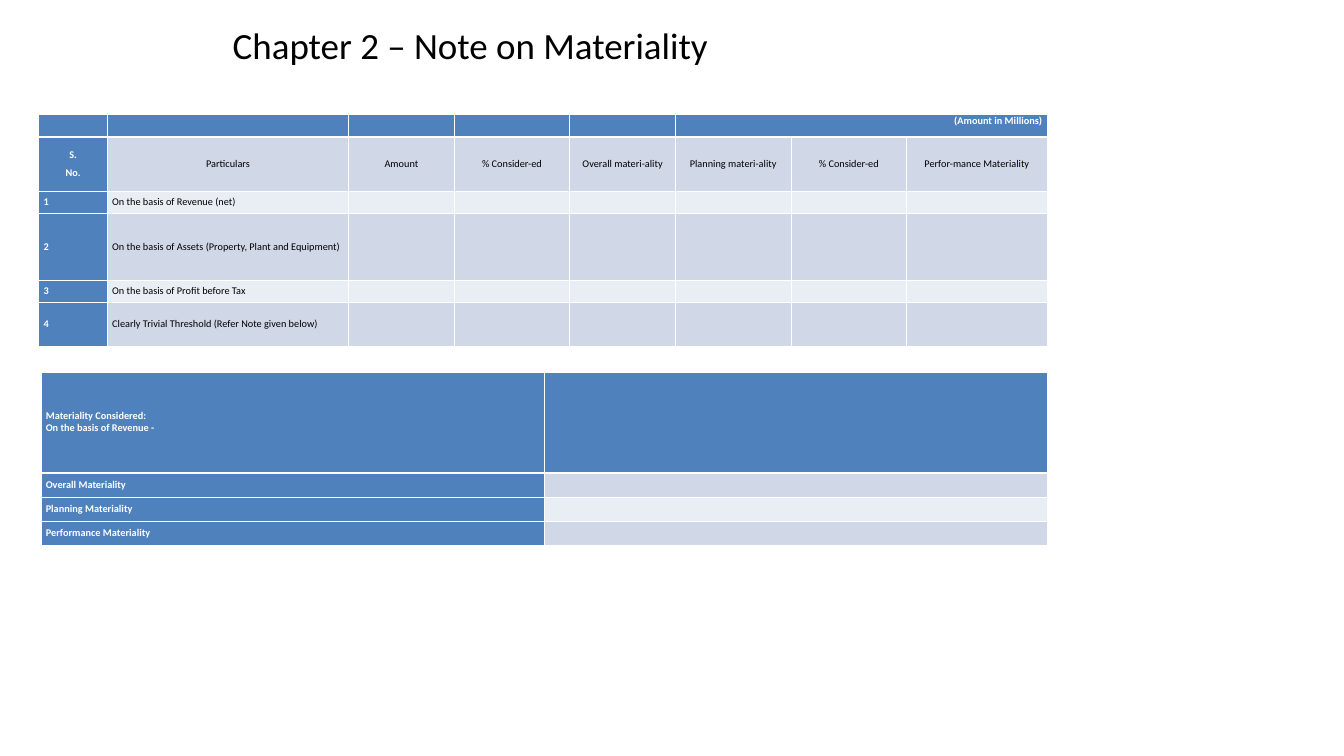
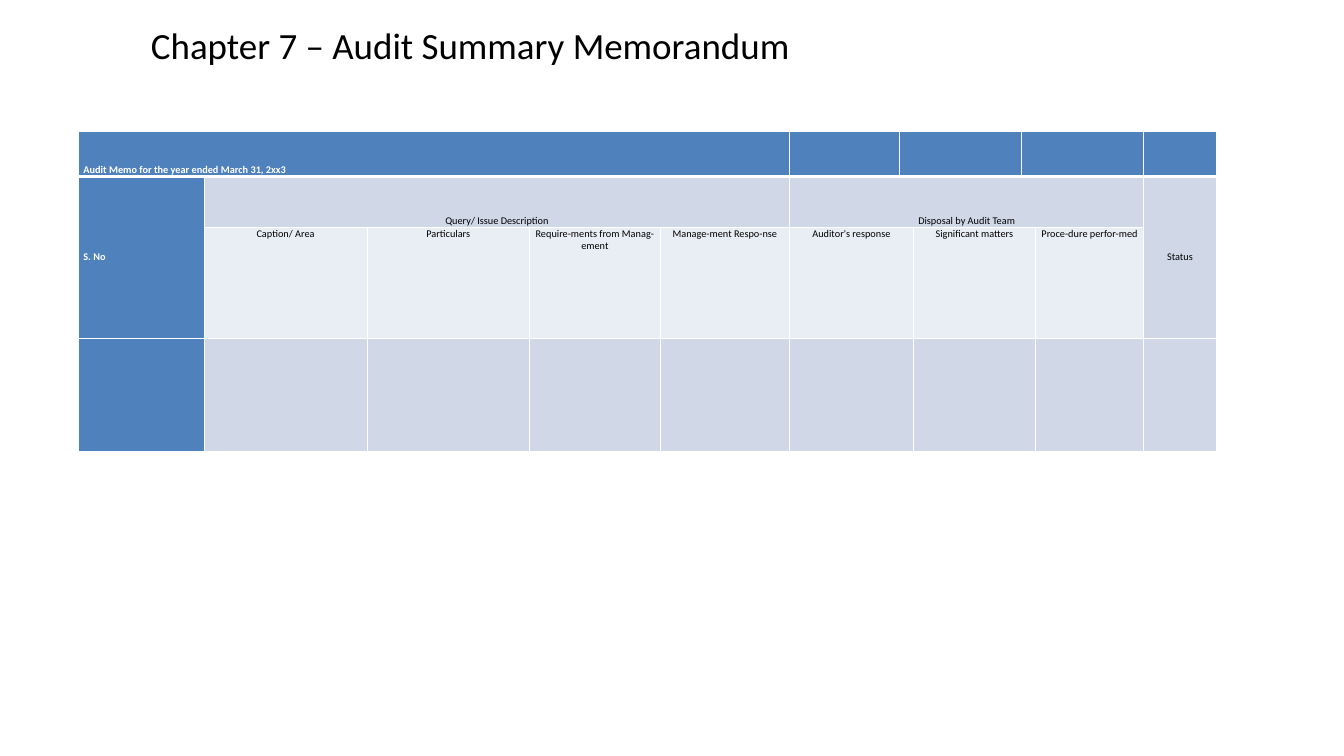
"""Build two audit slides with materiality and memorandum tables."""
from lxml import etree
from pptx import Presentation
from pptx.dml.color import RGBColor
from pptx.enum.text import MSO_ANCHOR, MSO_AUTO_SIZE, PP_ALIGN
from pptx.oxml.ns import qn
from pptx.util import Cm, Pt

TOP, MIDDLE, BOTTOM = MSO_ANCHOR.TOP, MSO_ANCHOR.MIDDLE, MSO_ANCHOR.BOTTOM
LEFT, CENTER, RIGHT, JUSTIFY = PP_ALIGN.LEFT, PP_ALIGN.CENTER, PP_ALIGN.RIGHT, PP_ALIGN.JUSTIFY

FONT = "Calibri"
BLACK, WHITE = "000000", "FFFFFF"
HEADER, DARK_BAND, LIGHT_BAND = "4F81BD", "D0D8E8", "E9EDF4"
TITLE_BOX = (1.27, 0.76, 33.02, 1.88)
SIDE_INSET = 0.18
THIN, THICK = 1, 3
TITLE_ONLY = 5

BASIS_TABLE = {
    "position": (1.47, 4.34),
    "columns": [2.59, 9.12, 3.99, 4.37, 3.99, 4.37, 4.37, 5.31],
    "rows": [0.84, 2.06, 0.84, 2.51, 0.84, 1.68],
    "anchors": [TOP] + [MIDDLE] * 5,
    "alignments": [RIGHT, CENTER] + [JUSTIFY] * 4,
    "spans": [(0, 5, 0, 7)],
    "texts": [
        ["", "", "", "", "", "(Amount in Millions)"],
        ["S.\nNo.", "Particulars", "Amount", "% Consider-ed", "Overall materi-ality",
         "Planning materi-ality", "% Consider-ed", "Perfor-mance Materiality"],
        ["1", "On the basis of Revenue (net)"],
        ["2", "On the basis of Assets (Property, Plant and Equipment)"],
        ["3", "On the basis of Profit before Tax"],
        ["4", "Clearly Trivial Threshold (Refer Note given below)"],
    ],
}
CONSIDERED_TABLE = {
    "position": (1.55, 14.07),
    "columns": [19.02] * 2,
    "rows": [3.81] + [0.91] * 3,
    "anchors": [MIDDLE] * 4,
    "alignments": [LEFT] + [JUSTIFY] * 3,
    "spans": [],
    "texts": [
        ["Materiality Considered:\vOn the basis of Revenue -"],
        ["Overall Materiality"],
        ["Planning Materiality"],
        ["Performance Materiality"],
    ],
}
MEMO_TABLE = {
    "position": (2.97, 4.98),
    "columns": [4.75, 6.15, 6.15, 4.93, 4.9, 4.14, 0.53, 4.09, 0.53, 4.09, 2.74],
    "rows": [1.7, 1.93, 4.19, 4.27],
    "anchors": [BOTTOM, BOTTOM, TOP, TOP],
    "alignments": [JUSTIFY, CENTER, CENTER, CENTER],
    "exceptions": {(1, 0): (MIDDLE, JUSTIFY), (1, 10): (MIDDLE, CENTER)},
    "spans": [(0, 0, 0, 4), (0, 6, 0, 7), (0, 8, 0, 9),
              (1, 0, 2, 0), (1, 1, 1, 4), (1, 5, 1, 9), (1, 10, 2, 10),
              (2, 5, 2, 6), (2, 7, 2, 8), (3, 5, 3, 6), (3, 7, 3, 8)],
    "texts": [
        ["Audit Memo for the year ended March 31, 2xx3"],
        ["S. No", "Query/ Issue Description", "", "", "", "Disposal by Audit Team",
         "", "", "", "", "Status"],
        ["", "Caption/ Area", "Particulars", "Require-ments from Manag-ement",
         "Manage-ment Respo-nse", "Auditor's response", "", "Significant matters", "",
         "Proce-dure perfor-med"],
        [],
    ],
}
SLIDES = [
    ("Chapter 2 – Note on Materiality", [BASIS_TABLE, CONSIDERED_TABLE]),
    ("Chapter 7 – Audit Summary Memorandum", [MEMO_TABLE]),
]


def color(value):
    return RGBColor.from_string(value)


def style_run(run, size, font_color, bold=False):
    run.font.name = FONT
    run.font.size = Pt(size)
    run.font.bold = bold
    run.font.color.rgb = color(font_color)


def add_title(slide, text):
    title = slide.shapes.title
    title.left, title.top, title.width, title.height = map(Cm, TITLE_BOX)
    frame = title.text_frame
    frame.auto_size = MSO_AUTO_SIZE.NONE
    frame.vertical_anchor = MIDDLE
    paragraph = frame.paragraphs[0]
    paragraph.alignment = CENTER
    run = paragraph.add_run()
    run.text = text
    style_run(run, 39.6, BLACK)


def set_borders(cell, row_index):
    widths = {
        "L": THIN,
        "R": THIN,
        "T": THICK if row_index == 1 else THIN,
        "B": THICK if row_index == 0 else THIN,
    }
    properties = cell._tc.get_or_add_tcPr()
    for side, width in widths.items():
        line = etree.SubElement(properties, qn(f"a:ln{side}"), w=str(Pt(width)))
        fill = etree.SubElement(line, qn("a:solidFill"))
        etree.SubElement(fill, qn("a:srgbClr"), val=WHITE)


def write_cell(cell, text, alignment, font_color, bold):
    frame = cell.text_frame
    for index, paragraph_text in enumerate(text.split("\n")):
        paragraph = frame.add_paragraph() if index else frame.paragraphs[0]
        paragraph.alignment = alignment
        paragraph.line_spacing = Pt(13)
        if index:
            paragraph.space_before = Pt(6)
        for line_index, line in enumerate(paragraph_text.split("\v")):
            if line_index:
                paragraph.add_line_break()
            if line:
                run = paragraph.add_run()
                run.text = line
                style_run(run, 11, font_color, bold)


def format_cell(cell, row, column, text, anchor, alignment):
    is_header = row == 0 or column == 0
    band = DARK_BAND if row % 2 else LIGHT_BAND
    set_borders(cell, row)
    cell.fill.solid()
    cell.fill.fore_color.rgb = color(HEADER if is_header else band)
    cell.margin_left = cell.margin_right = Cm(SIDE_INSET)
    cell.margin_top = cell.margin_bottom = Cm(0)
    cell.vertical_anchor = anchor
    write_cell(cell, text, alignment, WHITE if is_header else BLACK, is_header)


def add_grid(slide, content):
    widths, heights = content["columns"], content["rows"]
    left, top = content["position"]
    table = slide.shapes.add_table(len(heights), len(widths), Cm(left), Cm(top),
                                   Cm(sum(widths)), Cm(sum(heights))).table
    table.first_row = table.horz_banding = False
    for column, width in zip(table.columns, widths):
        column.width = Cm(width)
    for row, height in zip(table.rows, heights):
        row.height = Cm(height)
    exceptions = content.get("exceptions", {})
    for row, texts in enumerate(content["texts"]):
        default = content["anchors"][row], content["alignments"][row]
        for column in range(len(widths)):
            text = texts[column] if column < len(texts) else ""
            anchor, alignment = exceptions.get((row, column), default)
            format_cell(table.cell(row, column), row, column, text, anchor, alignment)
    for first_row, first_column, last_row, last_column in content["spans"]:
        table.cell(first_row, first_column).merge(table.cell(last_row, last_column))


def main():
    presentation = Presentation()
    presentation.slide_width, presentation.slide_height = Cm(50.8), Cm(28.58)
    for title, tables in SLIDES:
        slide = presentation.slides.add_slide(presentation.slide_layouts[TITLE_ONLY])
        add_title(slide, title)
        for content in tables:
            add_grid(slide, content)
    presentation.save("out.pptx")


if __name__ == "__main__":
    main()
